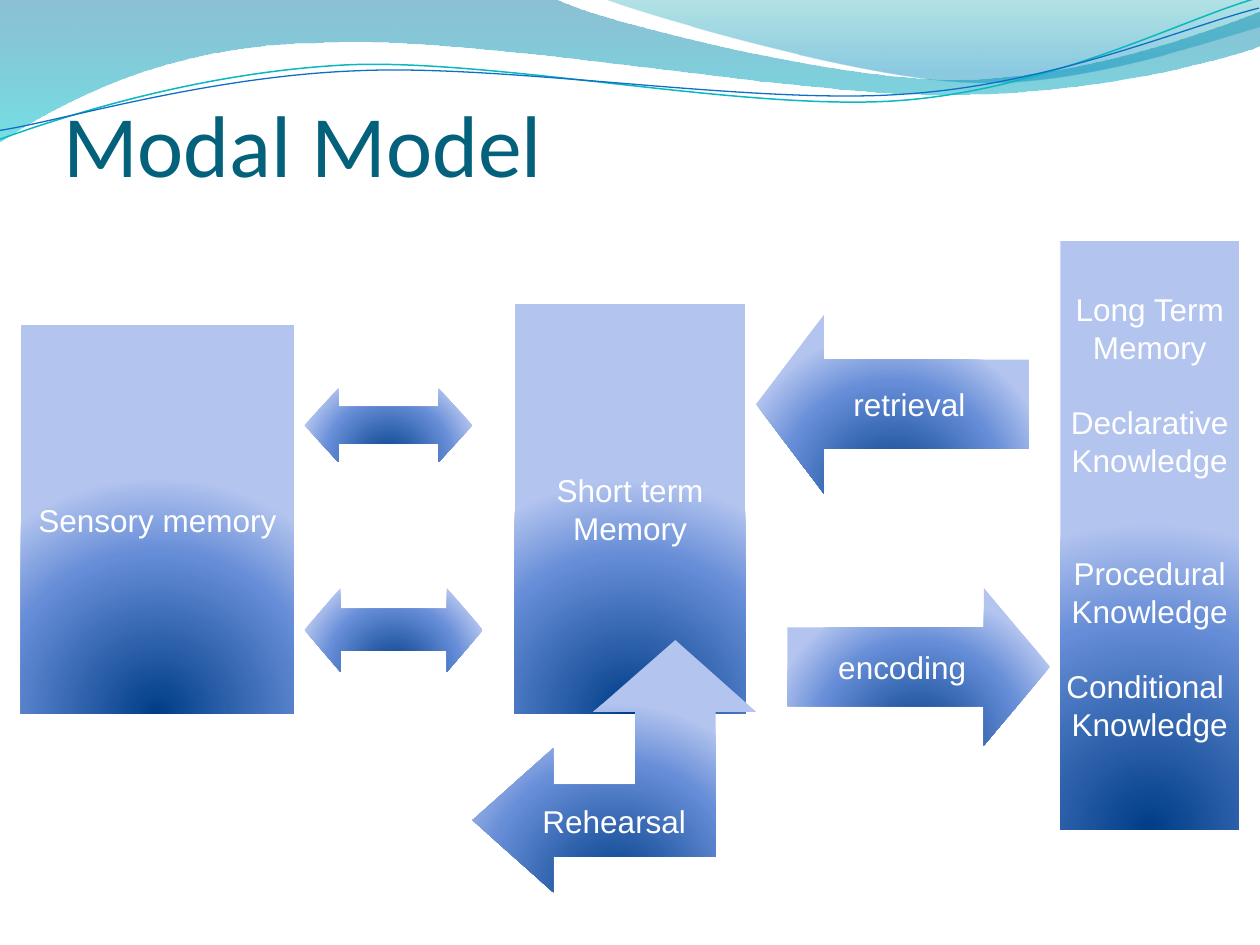
from lxml import etree
from pptx import Presentation
from pptx import util as u
from pptx.dml.color import RGBColor
from pptx.enum import shapes, text
from pptx.oxml import ns

PX = 3048  # 300 px to the inch
GRID = 3   # px per step of the outline grid

WHITE = RGBColor(0xFF, 0xFF, 0xFF)
TITLE_TEAL = RGBColor(0x04, 0x61, 0x7B)
LINE_TEAL = RGBColor(0x0A, 0xB8, 0xBF)
LINE_BLUE = RGBColor(0x0F, 0x6F, 0xC6)
NAVY = RGBColor(0x00, 0x3D, 0x87)
MID_BLUE = RGBColor(0x66, 0x8D, 0xD7)
PALE_BLUE = RGBColor(0xB3, 0xC4, 0xEF)
WAVE_BLUE = RGBColor(0x00, 0x74, 0xA1)
WAVE_CYAN = RGBColor(0x00, 0xC6, 0xCF)
CREST_GREEN = RGBColor(0x00, 0xA1, 0xA9)
CREST_BLUE = RGBColor(0x00, 0x8B, 0xBF)

# Gradient stops: position %, colour, opacity %
GLOW = [(0, NAVY, 100), (68, MID_BLUE, 100), (100, PALE_BLUE, 100)]
WAVE = [(0, WAVE_BLUE, 45), (100, WAVE_CYAN, 55)]
CREST = [(0, CREST_GREEN, 30), (80, CREST_BLUE, 45)]


class Painter:
    font = "Arial"
    size = 18
    line_step = 21.5  # points between lines of body text

    def __init__(self, page):
        self.page = page

    def gradient(self, shape, stops, radial=False):
        shape.shadow.inherit = False
        shape.line.fill.background()
        shape.fill.background()
        grad = etree.Element(ns.qn("a:gradFill"), rotWithShape="1")
        stop_list = etree.SubElement(grad, ns.qn("a:gsLst"))
        for position, color, opacity in stops:
            stop = etree.SubElement(stop_list, ns.qn("a:gs"), pos=str(position * 1000))
            value = etree.SubElement(stop, ns.qn("a:srgbClr"), val=str(color))
            if opacity < 100:
                etree.SubElement(value, ns.qn("a:alpha"), val=str(opacity * 1000))
        if radial:
            circle = etree.SubElement(grad, ns.qn("a:path"), path="circle")
            etree.SubElement(circle, ns.qn("a:fillToRect"),
                             l="50000", t="130000", r="50000", b="-30000")
        else:
            etree.SubElement(grad, ns.qn("a:lin"), ang="5400000", scaled="1")
        properties = shape._element.spPr
        properties.replace(properties.find(ns.qn("a:noFill")), grad)

    def outline(self, start, segments, close=True):
        """Segments of one point are lines, those of three points Bezier curves."""
        unit = GRID * PX
        builder = self.page.shapes.build_freeform(start[0] * unit, start[1] * unit, scale=1.0)
        builder.add_line_segments([(x * unit, y * unit) for part in segments for x, y in part],
                                  close=close)
        shape = builder.convert_to_shape()
        steps = iter(list(shape._element.iter(ns.qn("a:lnTo"))))
        for part in segments:
            step = next(steps)
            if len(part) == 3:
                bezier = etree.Element(ns.qn("a:cubicBezTo"))
                step.addprevious(bezier)
                for node in (step, next(steps), next(steps)):
                    bezier.append(node[0])
                    node.getparent().remove(node)
        return shape

    def band(self, start, segments, stops):
        self.gradient(self.outline(start, segments), stops)

    def curve(self, start, segments, color, width):
        shape = self.outline(start, segments, close=False)
        shape.rotation = 357.3
        shape.shadow.inherit = False
        shape.fill.background()
        shape.line.color.rgb = color
        shape.line.width = u.Pt(width)

    def title(self, words, left, top, width, height):
        box = self.page.shapes.title
        box.left, box.top, box.width, box.height = (v * PX for v in (left, top, width, height))
        frame = box.text_frame
        frame.auto_size = text.MSO_AUTO_SIZE.NONE
        frame.vertical_anchor = text.MSO_ANCHOR.BOTTOM
        frame.margin_left = frame.margin_right = frame.margin_bottom = 0
        para = frame.paragraphs[0]
        para.alignment = text.PP_ALIGN.LEFT
        self.span(para, words, "Calibri", 50, TITLE_TEAL)
        box._element.getparent().append(box._element)  # in front of the waves

    def span(self, para, words, font, size, color):
        span = para.add_run()
        span.text = words
        span.font.name = font
        span.font.size = u.Pt(size)
        span.font.color.rgb = color

    def label(self, shape, lines, top_inset=15, bottom_inset=15):
        """Centred lines; each is (words, blank line heights above it)."""
        frame = shape.text_frame
        frame.word_wrap = False
        frame.vertical_anchor = text.MSO_ANCHOR.MIDDLE
        frame.margin_top, frame.margin_bottom = top_inset * PX, bottom_inset * PX
        for index, (words, gap) in enumerate(lines):
            para = frame.add_paragraph() if index else frame.paragraphs[0]
            para.alignment = text.PP_ALIGN.CENTER
            if gap:
                para.space_before = u.Pt(gap * self.line_step)
            self.span(para, words, self.font, self.size, WHITE)

    def block(self, kind, left, top, width, height, lines=(), adjust=(), **insets):
        shape = self.page.shapes.add_shape(kind, left * PX, top * PX, width * PX, height * PX)
        for index, value in enumerate(adjust):
            shape.adjustments[index] = value
        self.gradient(shape, GLOW, radial=True)
        if lines:
            self.label(shape, lines, **insets)

    def bent_arrow(self, corners, lines, **insets):
        shape = self.outline(corners[0], [[corner] for corner in corners[1:]])
        self.gradient(shape, GLOW, radial=True)
        self.label(shape, lines, **insets)


def main():
    deck = Presentation()
    deck.slide_width, deck.slide_height = 3000 * PX, 2250 * PX
    painter = Painter(deck.slides.add_slide(deck.slide_layouts[5]))
    kinds = shapes.MSO_SHAPE

    # Waves along the top
    painter.band((0, -1), [
        [(440, -1)], [(476, 17), (664, 63), (758, 63)],
        [(853, 63), (958, 26), (1000, 9)], [(1001, 36)],
        [(983, 44), (870, 76), (746, 75)], [(622, 75), (382, 28), (257, 34)],
        [(129, 35), (46, 83), (-1, 113)]], WAVE)
    painter.band((479, -1), [
        [(509, 11), (682, 62), (769, 65)],
        [(856, 69), (961, 32), (1000, 21)], [(1000, 0)]], CREST)
    painter.curve((-2, 87), [
        [(47, 72), (158, 41), (278, 41)], [(396, 42), (591, 93), (712, 90)],
        [(832, 87), (940, 36), (1000, 22)]], LINE_TEAL, 0.85)
    painter.curve((-2, 80), [
        [(46, 75), (164, 45), (283, 46)], [(403, 46), (596, 88), (716, 85)],
        [(835, 83), (942, 42), (1001, 30)]], LINE_BLUE, 0.75)

    painter.title("Modal Model", 150, 90, 2700, 375)

    # Memory stores
    painter.block(kinds.RECTANGLE, 50, 775, 650, 925, [("Sensory memory", 0)])
    painter.block(kinds.RECTANGLE, 1225, 725, 550, 975, [("Short term", 0), ("Memory", 0)])
    painter.block(kinds.RECTANGLE, 2525, 575, 425, 1400, [
        ("Long Term", 0), ("Memory", 0), ("Declarative", 1), ("Knowledge", 0),
        ("Procedural", 2), ("Knowledge", 0), ("Conditional ", 1), ("Knowledge", 0),
    ], bottom_inset=105)

    # Arrows between the stores
    painter.block(kinds.LEFT_RIGHT_ARROW, 725, 1400, 425, 200, adjust=(0.5, 0.43))
    painter.block(kinds.LEFT_RIGHT_ARROW, 725, 925, 400, 175, adjust=(0.5, 0.46))
    painter.block(kinds.LEFT_ARROW, 1800, 750, 650, 425, [("retrieval", 0)], (0.5, 0.38))
    painter.block(kinds.RIGHT_ARROW, 1875, 1400, 625, 375, [("encoding", 0)], (0.5, 0.42))

    # Rehearsal loop, its label in the lower arm
    painter.bent_arrow([
        (536, 508), (471, 565), (504, 565), (504, 623), (439, 623), (439, 594),
        (375, 651), (439, 708), (439, 680), (568, 680), (568, 565), (600, 565),
    ], [("Rehearsal", 0)], top_inset=276)

    deck.save("out.pptx")


if __name__ == "__main__":
    main()
